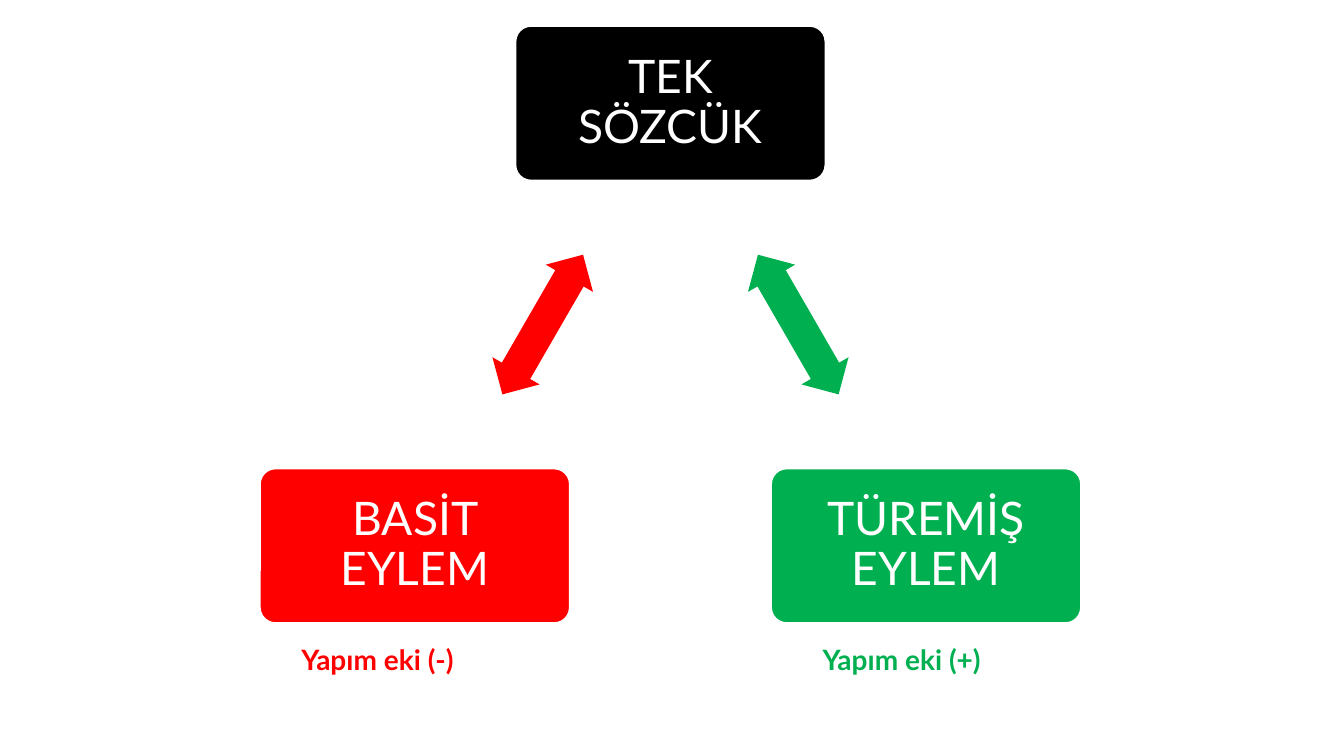
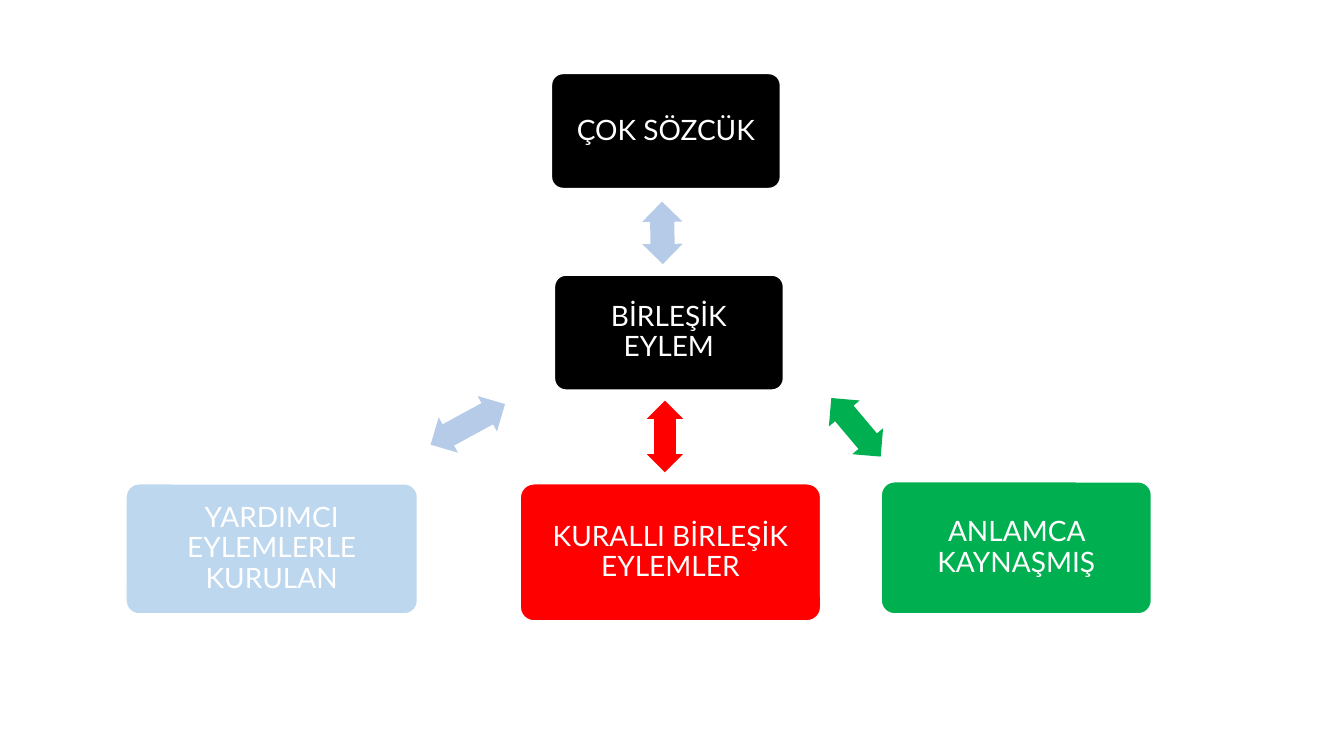
from dataclasses import dataclass
from math import atan2, degrees

from pptx import Presentation
from pptx.dml.color import RGBColor
from pptx.enum.shapes import MSO_SHAPE
from pptx.enum.text import MSO_ANCHOR, MSO_AUTO_SIZE, PP_ALIGN
from pptx.util import Inches, Pt


@dataclass(frozen=True)
class Theme:
    """Colours, font and type sizes shared by the slides."""
    font: str = "Lato"
    black: str = "000000"
    white: str = "FFFFFF"
    red: str = "FF0000"
    green: str = "00B050"
    pale_blue: str = "BDD7EE"
    arrow_blue: str = "B5CBE7"
    large: int = 33
    regular: int = 20


@dataclass(frozen=True)
class Box:
    """A rectangle measured in inches."""
    left: float
    top: float
    width: float
    height: float

    @property
    def center(self):
        """Return the middle point."""
        return self.left + self.width / 2, self.top + self.height / 2

    def inner(self, left, top, width, height):
        """Return a box offset from this one's corner."""
        return Box(self.left + left, self.top + top, width, height)

    def lengths(self):
        """Return position and size for a shape."""
        return [Inches(side) for side in (self.left, self.top, self.width, self.height)]


THEME = Theme()


def style_text(frame, text, size, color, bold=False):
    """Set the text of a frame and format its runs."""
    frame.text = text
    frame.word_wrap = True
    for run in frame.paragraphs[0].runs:
        run.font.name = THEME.font
        run.font.size = Pt(size)
        run.font.bold = bold
        run.font.color.rgb = RGBColor.from_string(color)


def add_filled(slide, preset, box, color):
    """Add a flat preset shape of one colour."""
    shape = slide.shapes.add_shape(preset, *box.lengths())
    shape.shadow.inherit = False
    shape.fill.solid()
    shape.fill.fore_color.rgb = RGBColor.from_string(color)
    return shape


def add_node(slide, box, text, color, size, inset):
    """Add a rounded node with centred white text."""
    node = add_filled(slide, MSO_SHAPE.ROUNDED_RECTANGLE, box, color)
    node.adjustments[0] = 0.1
    node.line.color.rgb = RGBColor.from_string(THEME.white)
    node.line.width = Pt(1)
    frame = node.text_frame
    style_text(frame, text, size, THEME.white)
    frame.vertical_anchor = MSO_ANCHOR.MIDDLE
    frame.margin_left = frame.margin_right = Inches(inset)
    frame.margin_top = frame.margin_bottom = Inches(inset)
    frame.paragraphs[0].alignment = PP_ALIGN.CENTER
    frame.paragraphs[0].line_spacing = 0.9


def add_arrow(slide, box, angle, color):
    """Add a two-headed arrow turned by an angle."""
    arrow = add_filled(slide, MSO_SHAPE.LEFT_RIGHT_ARROW, box, color)
    arrow.adjustments[0] = 0.6
    arrow.adjustments[1] = 0.5
    arrow.line.fill.background()
    arrow.rotation = angle % 360


def add_link(slide, start, end, color, length=1.6, thickness=0.54):
    """Add an arrow midway between two nodes, along their axis."""
    (x1, y1), (x2, y2) = start.center, end.center
    box = Box((x1 + x2 - length) / 2, (y1 + y2 - thickness) / 2, length, thickness)
    add_arrow(slide, box, degrees(atan2(y2 - y1, x2 - x1)), color)


def add_caption(slide, box, text, color):
    """Add a bold coloured caption."""
    frame = slide.shapes.add_textbox(*box.lengths()).text_frame
    style_text(frame, text, THEME.regular, color, bold=True)
    frame.auto_size = MSO_AUTO_SIZE.SHAPE_TO_FIT_TEXT


def build_single_word(slide, region):
    """Build the single-word verb tree inside a region."""
    width, height = 3.07, 1.53
    root = region.inner((region.width - width) / 2, 0, width, height)
    add_node(slide, root, "TEK SÖZCÜK", THEME.black, THEME.large, 0.14)
    branches = [
        (0, "BASİT EYLEM", THEME.red, "Yapım eki (-)", 0.31),
        (region.width - width, "TÜREMİŞ EYLEM", THEME.green, "Yapım eki (+)", 0.41),
    ]
    for left, verb, color, suffix, indent in branches:
        branch = region.inner(left, region.height - height, width, height)
        add_link(slide, root, branch, color)
        add_node(slide, branch, verb, color, THEME.large, 0.14)
        add_caption(slide, branch.inner(indent, height + 0.14, 2.43, 0.44), suffix, color)


def build_compound(slide, region):
    """Build the compound verb tree inside a region."""
    nodes = [
        ((4.22, 0, 2.27, 1.14), "ÇOK SÖZCÜK", THEME.black),
        ((4.25, 2, 2.27, 1.14), "BİRLEŞİK EYLEM", THEME.black),
        ((0, 4.07, 2.89, 1.29), "YARDIMCI EYLEMLERLE KURULAN", THEME.pale_blue),
        ((3.91, 4.07, 2.98, 1.36), "KURALLI BİRLEŞİK EYLEMLER", THEME.red),
        ((7.49, 4.05, 2.68, 1.31), "ANLAMCA KAYNAŞMIŞ", THEME.green),
    ]
    arrows = [
        ((5.01, 1.38, 0.62, 0.4), 269.3, THEME.arrow_blue),
        ((2.97, 3.28, 0.84, 0.4), 331.4, THEME.arrow_blue),
        ((4.99, 3.42, 0.71, 0.36), 90, THEME.red),
        ((6.86, 3.31, 0.76, 0.4), 49.9, THEME.green),
    ]
    for place, verb, color in nodes:
        add_node(slide, region.inner(*place), verb, color, THEME.regular, 0.08)
    for place, angle, color in arrows:
        add_arrow(slide, region.inner(*place), angle, color)


def main():
    """Build and save the presentation."""
    deck = Presentation()
    deck.slide_width, deck.slide_height = Inches(13.33), Inches(7.5)
    blank = deck.slide_layouts[6]
    build_single_word(deck.slides.add_slide(blank), Box(2.58, 0.26, 8.14, 5.92))
    build_compound(deck.slides.add_slide(blank), Box(1.25, 0.73, 10.17, 5.43))
    deck.save("out.pptx")


if __name__ == "__main__":
    main()
